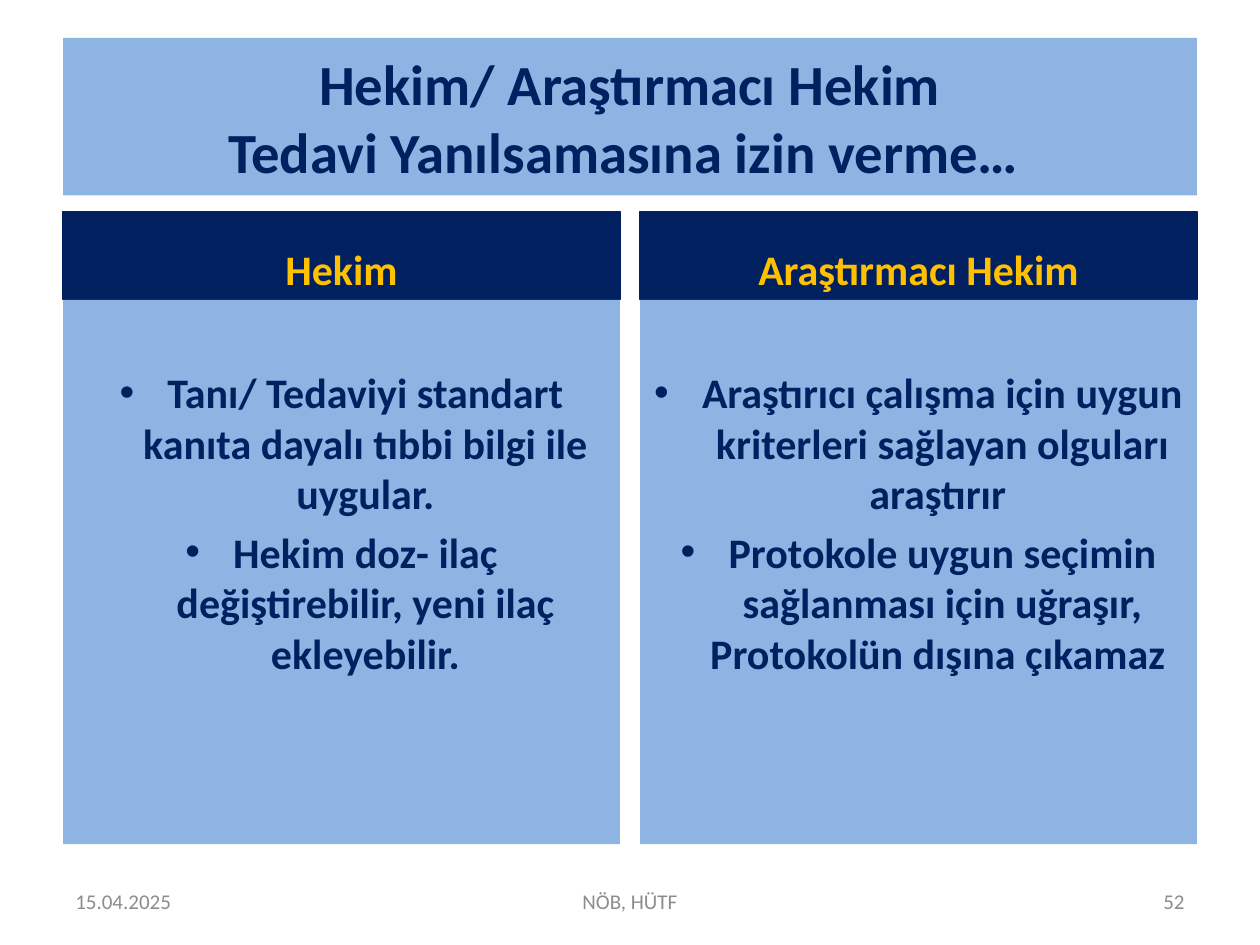
from dataclasses import dataclass

from lxml import etree
from pptx import Presentation
from pptx.dml.color import RGBColor
from pptx.enum.shapes import MSO_SHAPE
from pptx.enum.text import MSO_ANCHOR, MSO_AUTO_SIZE, PP_ALIGN
from pptx.oxml.ns import qn
from pptx.util import Inches, Pt

RECTANGLE = MSO_SHAPE.RECTANGLE
TOP, MIDDLE, BOTTOM = MSO_ANCHOR.TOP, MSO_ANCHOR.MIDDLE, MSO_ANCHOR.BOTTOM
LEFT, CENTER, RIGHT = PP_ALIGN.LEFT, PP_ALIGN.CENTER, PP_ALIGN.RIGHT
NO_AUTOFIT = MSO_AUTO_SIZE.NONE
TITLE_ONLY = 5


@dataclass(frozen=True)
class Theme:
    """Colours, font and type sizes of the deck."""
    font: str = "Calibri"
    navy: RGBColor = RGBColor(0x00, 0x20, 0x60)
    sky: RGBColor = RGBColor(0x8E, 0xB4, 0xE3)
    gold: RGBColor = RGBColor(0xFF, 0xC0, 0x00)
    grey: RGBColor = RGBColor(0x8C, 0x8C, 0x8C)
    title_size: float = 32.4
    body_size: float = 24
    footer_size: float = 12


@dataclass(frozen=True)
class Box:
    """A region of the page in inches."""
    left: float
    top: float
    width: float
    height: float

    def lengths(self):
        """Return left, top, width and height as lengths."""
        return [Inches(n) for n in (self.left, self.top, self.width, self.height)]


THEME = Theme()
TITLE = "Hekim/ Araştırmacı Hekim\vTedavi Yanılsamasına izin verme… "
COLUMNS = [
    ("Hekim", [
        "Tanı/ Tedaviyi standart kanıta dayalı tıbbi bilgi ile uygular.",
        "Hekim doz- ilaç değiştirebilir, yeni ilaç ekleyebilir.",
    ]),
    ("Araştırmacı Hekim", [
        "Araştırıcı çalışma için uygun kriterleri sağlayan olguları araştırır ",
        "Protokole uygun seçimin sağlanması için uğraşır, Protokolün dışına çıkamaz ",
    ]),
]


def write(frame, lines, size, color, align=CENTER, anchor=MIDDLE, bold=True):
    """Fill a text frame with evenly formatted paragraphs."""
    frame.word_wrap = True
    frame.auto_size = NO_AUTOFIT
    frame.vertical_anchor = anchor
    frame.margin_left = frame.margin_right = Inches(0.1)
    frame.margin_top = frame.margin_bottom = Inches(0.05)
    frame.text = "\n".join(lines)
    for para in frame.paragraphs:
        para.alignment = align
        para.font.name = THEME.font
        para.font.size = Pt(size)
        para.font.bold = bold
        para.font.color.rgb = color


def add_bullet(para):
    """Give a paragraph a round bullet with a hanging indent."""
    properties = para._p.get_or_add_pPr()
    properties.set("marL", str(Inches(0.38)))
    properties.set("indent", str(Inches(-0.38)))
    font = etree.Element(qn("a:buFont"), typeface="Arial")
    bullet = etree.Element(qn("a:buChar"), char="•")
    properties.insert_element_before(font, "a:defRPr")
    properties.insert_element_before(bullet, "a:defRPr")


def add_panel(page, box, fill):
    """Add a plain filled rectangle."""
    panel = page.shapes.add_shape(RECTANGLE, *box.lengths())
    panel.shadow.inherit = False
    panel.fill.solid()
    panel.fill.fore_color.rgb = fill
    panel.line.fill.background()
    return panel


def place_title(page, box):
    """Move and format the title placeholder."""
    title = page.shapes.title
    title.left, title.top, title.width, title.height = box.lengths()
    title.fill.solid()
    title.fill.fore_color.rgb = THEME.sky
    write(title.text_frame, [TITLE], THEME.title_size, THEME.navy)


def add_column(page, box, heading, points):
    """Add a headed panel of bullet points."""
    head_height = 0.7
    head = add_panel(page, Box(box.left, box.top, box.width, head_height), THEME.navy)
    head.line.color.rgb = THEME.navy
    head.line.width = Pt(0.75)
    write(head.text_frame, [heading], THEME.body_size, THEME.gold, anchor=BOTTOM)

    body_box = Box(box.left, box.top + head_height, box.width, box.height - head_height)
    frame = add_panel(page, body_box, THEME.sky).text_frame
    write(frame, points, THEME.body_size, THEME.navy, anchor=TOP)
    frame.margin_top = Inches(0.53)
    for para in frame.paragraphs:
        add_bullet(para)
    for para in frame.paragraphs[1:]:
        para.space_before = Pt(0.2 * THEME.body_size)


def add_footer(page, box):
    """Add the date, the author and the page number in one row."""
    side, middle = 2.33, 3.17
    items = [
        ("15.04.2025", box.left, side, LEFT),
        ("NÖB, HÜTF", box.left + (box.width - middle) / 2, middle, CENTER),
        ("52", box.left + box.width - side, side, RIGHT),
    ]
    for text, left, width, align in items:
        label = page.shapes.add_textbox(*Box(left, box.top, width, box.height).lengths())
        write(label.text_frame, [text], THEME.footer_size, THEME.grey, align, bold=False)


def main():
    """Build the slide and save the deck."""
    deck = Presentation()
    deck.slide_width, deck.slide_height = Inches(10), Inches(7.5)
    page = deck.slides.add_slide(deck.slide_layouts[TITLE_ONLY])

    margin, content_width, gap = 0.5, 9, 0.16
    column_width = (content_width - gap) / len(COLUMNS)
    place_title(page, Box(margin, 0.3, content_width, 1.25))
    for index, (heading, points) in enumerate(COLUMNS):
        left = margin + index * (column_width + gap)
        add_column(page, Box(left, 1.68, column_width, 5.02), heading, points)
    add_footer(page, Box(margin, 6.95, content_width, 0.4))
    deck.save("out.pptx")


if __name__ == "__main__":
    main()
